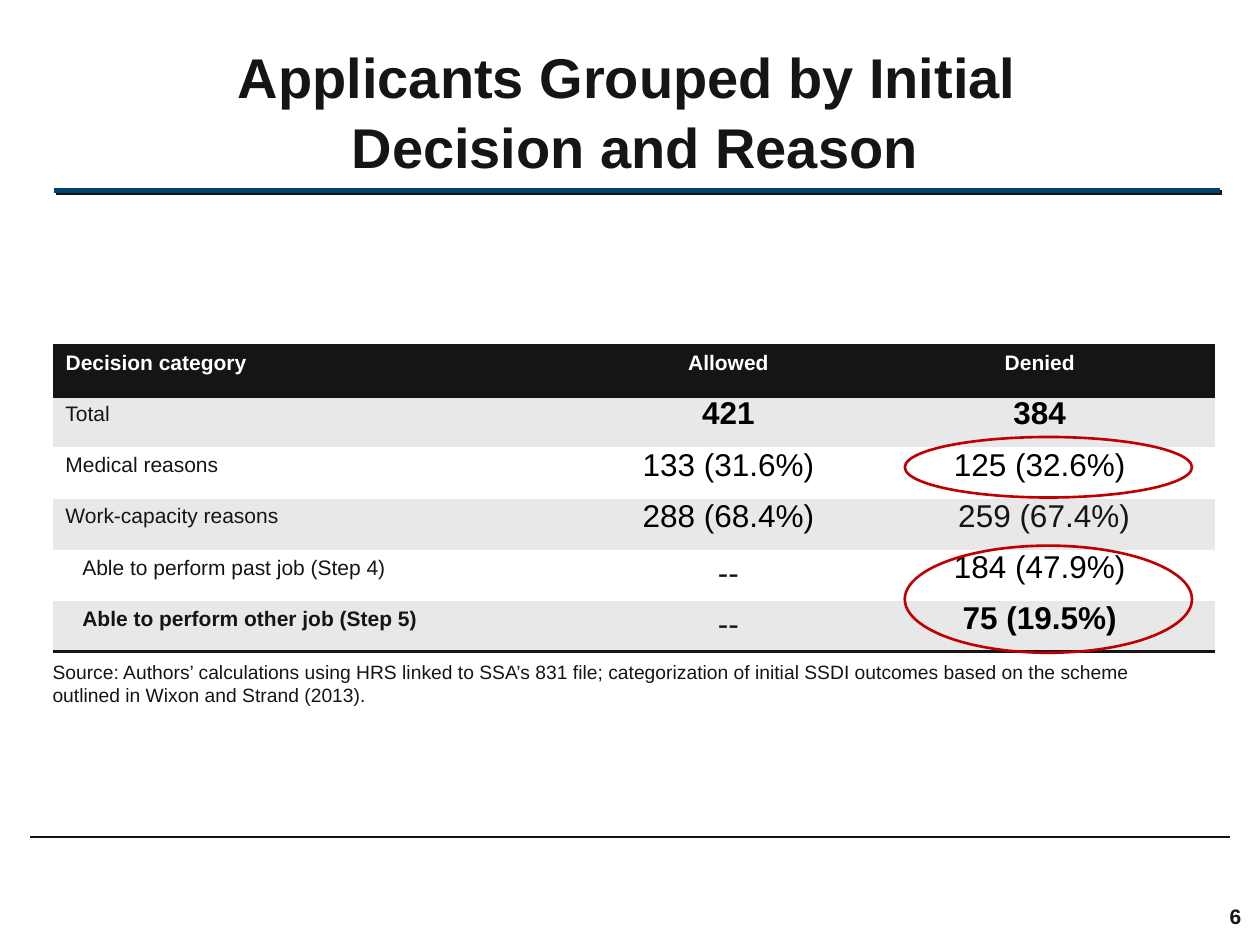
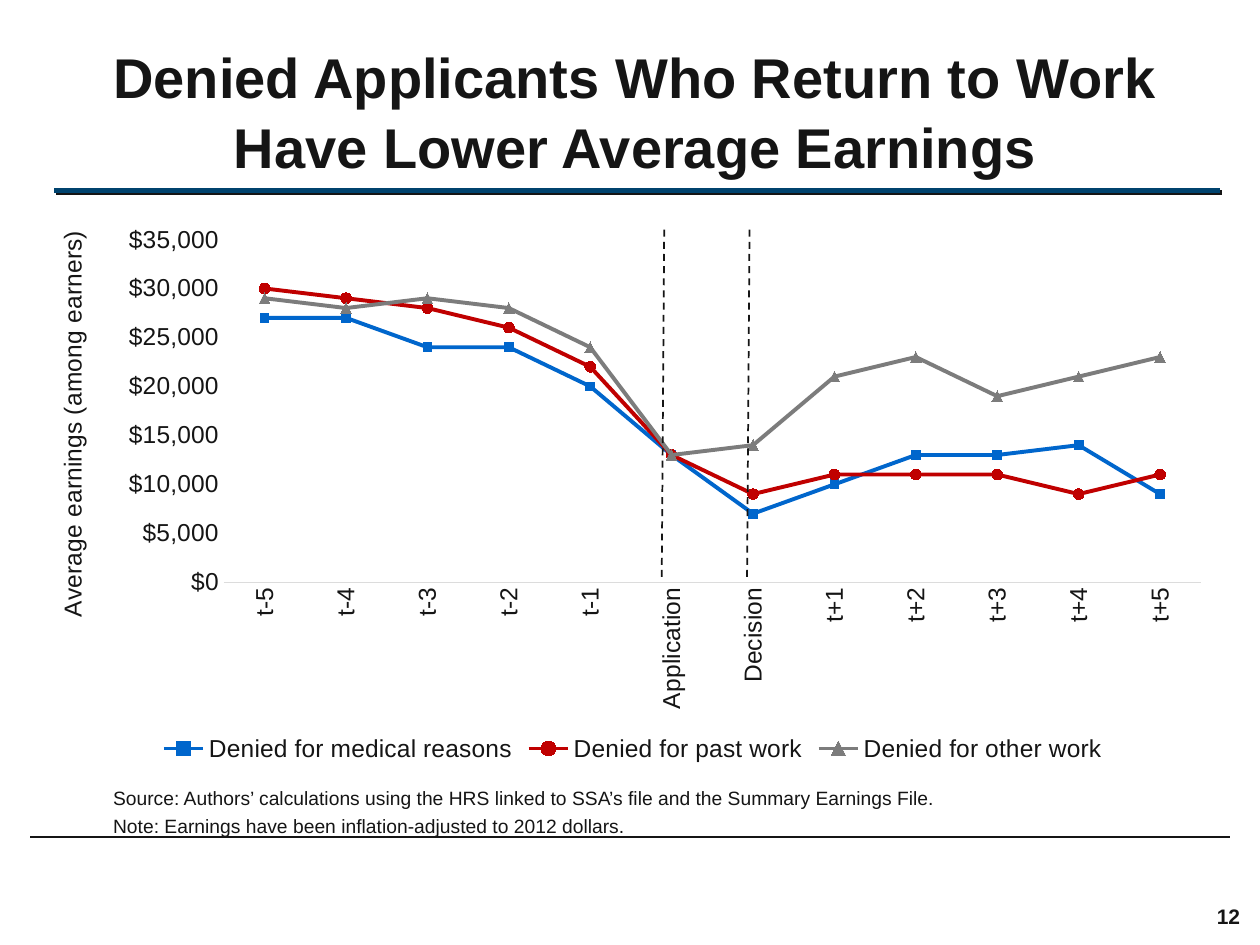
from dataclasses import dataclass
from typing import Any

import pptx
import pptx.chart.data
import pptx.dml.color
import pptx.enum.chart
import pptx.enum.dml
import pptx.enum.shapes
import pptx.enum.text
import pptx.oxml
import pptx.oxml.ns
import pptx.util

Cm = pptx.util.Cm
Pt = pptx.util.Pt

COLORS = {
    "ink": "151515", "black": "000000", "white": "FFFFFF", "band": "E8E8E8",
    "rule": "00436E", "red": "C00000", "blue": "0066CC", "gray": "7C7C7C",
    "axis": "DCDCDC",
}
FONT = "Arial"
CENTER = pptx.enum.text.PP_ALIGN.CENTER
LEFT = pptx.enum.text.PP_ALIGN.LEFT
PLAIN_TABLE = "{2D5ABB26-0587-4C30-8999-92F81FD0307C}"


@dataclass(frozen=True)
class Box:
    left: float
    top: float
    width: float
    height: float

    def lengths(self) -> list[Any]:
        return [Cm(v) for v in (self.left, self.top, self.width, self.height)]


@dataclass(frozen=True)
class Line:
    start: tuple[float, float]
    end: tuple[float, float]
    color: str
    width: float
    dashed: bool = False
    shadow: bool = False


@dataclass(frozen=True)
class DecisionRow:
    category: str
    allowed: str
    denied: str
    step: bool = False
    bold_label: bool = False
    bold_counts: tuple[bool, bool] = (False, False)
    denied_color: str = "black"


@dataclass(frozen=True)
class Earnings:
    group: str
    thousands: tuple[int, ...]
    color: str
    marker: Any
    marker_size: int


# Shared look
TITLE = Box(1.07, 0.56, 23.47, 3.18)
RULES = (
    Line((1.09, 3.84), (24.59, 3.84), "rule", 3, shadow=True),
    Line((0.61, 16.87), (24.79, 16.87), "ink", 1.5),
)

# Decision table
COLUMN_WIDTHS = (10.87, 5.49, 7.06)
ROW_HEIGHT = 1.03
DECISIONS = (
    DecisionRow("Total", "421", "384", bold_counts=(True, True)),
    DecisionRow("Medical reasons", "133 (31.6%)", "125 (32.6%)"),
    DecisionRow("Work-capacity reasons", "288 (68.4%)", " 259 (67.4%)",
                denied_color="ink"),
    DecisionRow("Able to perform past job (Step 4)", "--", "184 (47.9%)", step=True),
    DecisionRow("Able to perform other job (Step 5)", "--", "75 (19.5%)", step=True,
                bold_label=True, bold_counts=(False, True)),
)
HIGHLIGHTS = (Box(18.24, 8.81, 5.79, 1.22), Box(18.24, 11, 5.79, 2.16))

# Earnings chart
PERIODS = ([f"t-{n}" for n in range(5, 0, -1)] + ["Application", "Decision"]
           + [f"t+{n}" for n in range(1, 6)])
MARKERS = pptx.enum.chart.XL_MARKER_STYLE
EARNINGS = (
    Earnings("Denied for medical reasons",
             (27, 27, 24, 24, 20, 13, 7, 10, 13, 13, 14, 9), "blue", MARKERS.SQUARE, 5),
    Earnings("Denied for past work",
             (30, 29, 28, 26, 22, 13, 9, 11, 11, 11, 9, 11), "red", MARKERS.CIRCLE, 6),
    Earnings("Denied for other work",
             (29, 28, 29, 28, 24, 13, 14, 21, 23, 19, 21, 23), "gray", MARKERS.TRIANGLE, 6),
)


def rgb(color: str) -> pptx.dml.color.RGBColor:
    return pptx.dml.color.RGBColor.from_string(COLORS[color])


def assign(target: Any, values: dict[str, Any]) -> None:
    for name, value in values.items():
        setattr(target, name, value)


def style_font(font: Any, size: float, color: str = "ink", bold: bool = False) -> None:
    assign(font, {"name": FONT, "size": Pt(size), "bold": bold})
    font.color.rgb = rgb(color)


def fill_solid(fill: Any, color: str) -> None:
    fill.solid()
    fill.fore_color.rgb = rgb(color)


def xml(markup: str) -> Any:
    """Parse one drawing element, adding the namespace to its root tag."""
    tag, rest = markup[1:].split(" ", 1)
    return pptx.oxml.parse_xml(f"<{tag} {pptx.oxml.ns.nsdecls('a', 'c')} {rest}")


def add_text(slide: Any, box: Box, lines: list[str], size: float, bold: bool = False,
             frame: dict[str, Any] | None = None,
             paragraph: dict[str, Any] | None = None, gap: float = 0) -> None:
    text_frame = slide.shapes.add_textbox(*box.lengths()).text_frame
    assign(text_frame, {"word_wrap": True, **(frame or {})})
    for i, line in enumerate(lines):
        p = text_frame.paragraphs[0] if i == 0 else text_frame.add_paragraph()
        p.text = line
        assign(p, paragraph or {})
        if i:
            p.space_before = Pt(gap)
        style_font(p.font, size, bold=bold)


def add_line(slide: Any, line: Line) -> None:
    connector = slide.shapes.add_connector(
        pptx.enum.shapes.MSO_CONNECTOR.STRAIGHT,
        *[Cm(v) for v in line.start + line.end])
    connector.line.color.rgb = rgb(line.color)
    connector.line.width = Pt(line.width)
    if line.dashed:
        connector.line.dash_style = pptx.enum.dml.MSO_LINE.DASH
    shadow = (f'<a:outerShdw dist="17780" dir="2700000"><a:srgbClr val="{COLORS["ink"]}"/>'
              "</a:outerShdw>") if line.shadow else ""
    connector._element.spPr.append(xml(f"<a:effectLst >{shadow}</a:effectLst>"))


def add_base(deck: Any, title: str, number: str, number_box: Box) -> Any:
    """Start a slide with its rules, title and page number."""
    slide = deck.slides.add_slide(deck.slide_layouts[6])
    for rule in RULES:
        add_line(slide, rule)
    add_text(slide, TITLE, [title], 32, bold=True,
             frame={"vertical_anchor": pptx.enum.text.MSO_ANCHOR.BOTTOM},
             paragraph={"alignment": CENTER, "line_spacing": 1.04})
    add_text(slide, number_box, [number], 12, bold=True)
    return slide


def write_cell(cell: Any, text: str, size: float, color: str, fill: str, bold: bool,
               align: Any = CENTER, margins: dict[str, Any] | None = None,
               borders: tuple[str, ...] = ()) -> None:
    p = cell.text_frame.paragraphs[0]
    p.text = text
    p.alignment = align
    style_font(p.font, size, color, bold)
    assign(cell, margins or {})
    fill_solid(cell.fill, fill)
    for i, side in enumerate(borders):
        cell._tc.get_or_add_tcPr().insert(i, xml(
            f'<a:ln{side} w="25400"><a:solidFill><a:srgbClr val="{COLORS["ink"]}"/>'
            f"</a:solidFill></a:ln{side}>"))


def add_decision_table(slide: Any) -> None:
    row_count = len(DECISIONS) + 1
    box = Box(1.07, 6.96, sum(COLUMN_WIDTHS), ROW_HEIGHT * row_count)
    table = slide.shapes.add_table(row_count, len(COLUMN_WIDTHS), *box.lengths()).table
    table._tbl.tblPr.find(pptx.oxml.ns.qn("a:tableStyleId")).text = PLAIN_TABLE
    for column, width in zip(table.columns, COLUMN_WIDTHS):
        column.width = Cm(width)
    for i, heading in enumerate(("Decision category", "Allowed", "Denied")):
        write_cell(table.cell(0, i), heading, 12, "white", "ink", True,
                   CENTER if i else LEFT, borders=("T", "B"))

    tight = {"margin_left": Cm(0.18), "margin_right": Cm(0.18),
             "margin_top": 0, "margin_bottom": 0}
    for r, row in enumerate(DECISIONS, start=1):
        fill = "band" if r % 2 else "white"
        borders = ("B",) if r == len(DECISIONS) else ()
        write_cell(table.cell(r, 0), row.category, 12, "ink", fill, row.bold_label, LEFT,
                   {"margin_left": Cm(0.59 if row.step else 0.25)}, borders)
        counts = zip((row.allowed, row.denied), ("black", row.denied_color),
                     row.bold_counts)
        for c, (count, color, bold) in enumerate(counts, start=1):
            blank = count == "--"
            write_cell(table.cell(r, c), count, 18, "ink" if blank else color, fill, bold,
                       margins=None if blank else tight, borders=borders)


def add_highlight(slide: Any, box: Box) -> None:
    ring = slide.shapes.add_shape(pptx.enum.shapes.MSO_SHAPE.OVAL, *box.lengths())
    ring.shadow.inherit = False
    ring.fill.background()
    ring.line.color.rgb = rgb("red")
    ring.line.width = Pt(1.5)


def manual_layout(**values: float | str) -> Any:
    """Build a chart layout from fractions of the chart frame."""
    parts = "".join(f'<c:{name} val="{value}"/>' for name, value in values.items())
    return xml(f"<c:layout ><c:manualLayout>{parts}</c:manualLayout></c:layout>")


def replace_layout(parent: Any, layout: Any, index: int) -> None:
    for old in parent.findall(pptx.oxml.ns.qn("c:layout")):
        parent.remove(old)
    parent.insert(index, layout)


def add_earnings_chart(slide: Any) -> None:
    data = pptx.chart.data.CategoryChartData()
    data.categories = PERIODS
    for group in EARNINGS:
        data.add_series(group.group, [v * 1000 for v in group.thousands])
    chart = slide.shapes.add_chart(pptx.enum.chart.XL_CHART_TYPE.LINE_MARKERS,
                                   *Box(0.81, 4.34, 23.9, 11.13).lengths(), data).chart
    style_font(chart.font, 11)
    assign(chart, {"has_title": False, "has_legend": True})
    assign(chart.legend, {"position": pptx.enum.chart.XL_LEGEND_POSITION.BOTTOM,
                          "include_in_layout": False})
    style_font(chart.legend.font, 14)

    # Series
    plot = chart.plots[0]
    plot.vary_by_categories = False
    for series, group in zip(plot.series, EARNINGS):
        series.smooth = False
        series.format.line.color.rgb = rgb(group.color)
        series.format.line.width = Pt(2.25)
        assign(series.marker, {"style": group.marker, "size": group.marker_size})
        fill_solid(series.marker.format.fill, group.color)
        series.marker.format.line.color.rgb = rgb(group.color)

    # Axes
    periods, dollars = chart.category_axis, chart.value_axis
    no_tick = pptx.enum.chart.XL_TICK_MARK.NONE
    for axis in (periods, dollars):
        assign(axis, {"major_tick_mark": no_tick, "minor_tick_mark": no_tick,
                      "has_major_gridlines": False})
        style_font(axis.tick_labels.font, 14)
    periods.format.line.color.rgb = rgb("axis")
    periods.format.line.width = Pt(0.75)
    label_body = periods._element.find(
        f"{pptx.oxml.ns.qn('c:txPr')}/{pptx.oxml.ns.qn('a:bodyPr')}")
    label_body.set("rot", "-5400000")
    label_body.set("vert", "horz")
    dollars.format.line.fill.background()
    assign(dollars, {"minimum_scale": 0, "maximum_scale": 35000, "major_unit": 5000})
    assign(dollars.tick_labels, {"number_format": '"$"#,##0',
                                 "number_format_is_linked": False})
    heading = dollars.axis_title
    heading.text_frame.text = "Average earnings (among earners)"
    style_font(heading.text_frame.paragraphs[0].runs[0].font, 14)
    heading.text_frame._txBody.bodyPr.set("rot", "-5400000")
    heading.text_frame._txBody.bodyPr.set("vert", "horz")

    # Placement inside the frame
    replace_layout(heading._element,
                   manual_layout(xMode="edge", yMode="edge", x=0.01, y=0.02), 1)
    replace_layout(chart._chartSpace.chart.plotArea,
                   manual_layout(layoutTarget="inner", xMode="edge", yMode="edge",
                                 x=0.155, y=0.044, w=0.824, h=0.621), 0)


def main() -> None:
    deck = pptx.Presentation()
    assign(deck, {"slide_width": Cm(25.4), "slide_height": Cm(19.05)})

    # Applicants by decision
    slide = add_base(deck, "Applicants Grouped by Initial \vDecision and Reason",
                     "6", Box(24.54, 18.08, 0.86, 0.76))
    add_decision_table(slide)
    add_text(slide, Box(0.81, 13.18, 23.42, 1.19),
             ["Source: Authors’ calculations using HRS linked to SSA’s 831 file; "
              "categorization of initial SSDI outcomes based on the scheme outlined in "
              "Wixon and Strand (2013)."], 11)
    for box in HIGHLIGHTS:
        add_highlight(slide, box)

    # Earnings around the decision
    slide = add_base(deck, "Denied Applicants Who Return to Work Have Lower Average Earnings",
                     "12", Box(24.28, 18.08, 1.12, 0.76))
    add_text(slide, Box(2.03, 15.72, 19.46, 1.3),
             ["Source: Authors’ calculations using the HRS linked to SSA’s file and the "
              "Summary Earnings File.",
              "Note: Earnings have been inflation-adjusted to 2012 dollars."], 11, gap=3)
    add_earnings_chart(slide)
    for event_x in (13.34, 15.06):
        add_line(slide, Line((event_x, 11.63), (event_x + 0.05, 4.55), "ink", 1,
                             dashed=True))

    deck.save("out.pptx")


if __name__ == "__main__":
    main()
